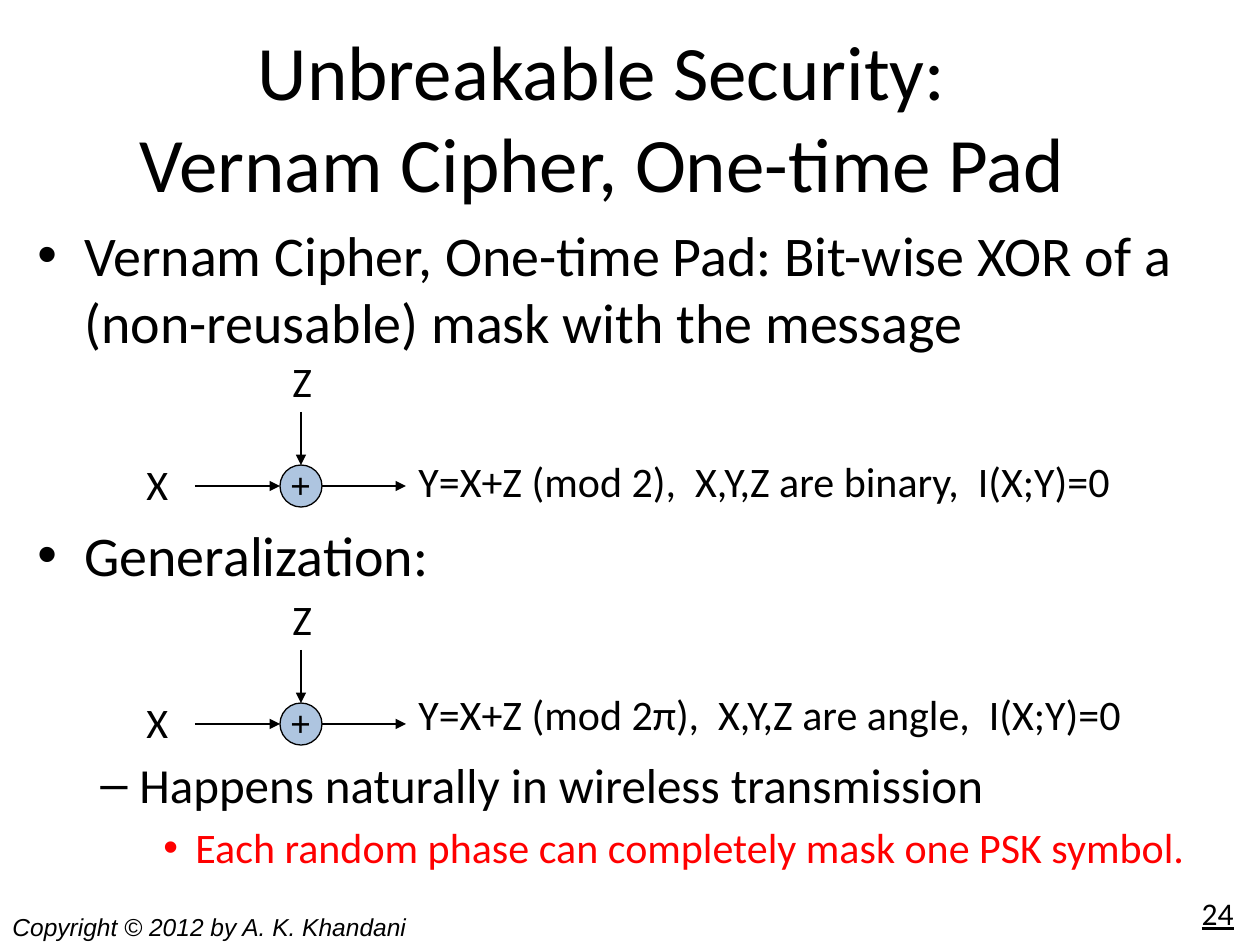
from lxml.etree import SubElement
from pptx import Presentation
from pptx.dml.color import RGBColor
from pptx.enum.shapes import MSO_CONNECTOR, MSO_SHAPE
from pptx.enum.text import MSO_ANCHOR, PP_ALIGN
from pptx.oxml.ns import qn
from pptx.util import Emu, Pt

PX = 914400 / 126
COLORS = {"text": "000000", "accent": "FF0000", "node": "4F81BD"}


def px(value):
    return Emu(round(value * PX))


def rgb(name):
    return RGBColor.from_string(COLORS[name])


def add_span(para, text, size, font="Calibri", color="text"):
    span = para.add_run()
    span.text = text
    span.font.size = Pt(size)
    span.font.name = font
    span.font.color.rgb = rgb(color)
    return span


def add_box(page, left, top, width, height, wrap=True, anchor=MSO_ANCHOR.TOP):
    frame = page.shapes.add_textbox(px(left), px(top), px(width), px(height)).text_frame
    frame.word_wrap = wrap
    frame.vertical_anchor = anchor
    return frame


def add_label(page, left, top, width, height, text, size=24, font="Calibri", wrap=False):
    frame = add_box(page, left, top, width, height, wrap)
    return add_span(frame.paragraphs[0], text, size, font)


def add_arrow(page, start_x, start_y, end_x, end_y):
    arrow = page.shapes.add_connector(
        MSO_CONNECTOR.STRAIGHT, px(start_x), px(start_y), px(end_x), px(end_y))
    arrow.line.color.rgb = rgb("text")
    arrow.line.width = Pt(0.75)
    SubElement(arrow.line._get_or_add_ln(), qn("a:tailEnd"), type="triangle")
    SubElement(arrow._element.spPr, qn("a:effectLst"))


def add_title(page, left, top, width, height):
    frame = add_box(page, left, top, width, height, anchor=MSO_ANCHOR.MIDDLE)
    para = frame.paragraphs[0]
    para.alignment = PP_ALIGN.CENTER
    add_span(para, "Unbreakable Security: ", 44)
    para.add_line_break()
    add_span(para, "Vernam Cipher, One-time Pad ", 44)


def add_body(page, left, top, width, height):
    # Text, size, colour, bullet, left margin, hanging indent, space before;
    # the large spaces leave room for the two diagrams
    items = [
        ("Vernam Cipher, One-time Pad: Bit-wise XOR of a (non-reusable) mask with the message",
         32, "text", "•", 47, 47, 0),
        ("Generalization:", 32, "text", "•", 47, 47, 95),
        ("Happens naturally in wireless transmission", 28, "text", "–", 102, 39, 95),
        ("Each random phase can completely mask one PSK symbol.",
         24, "accent", "•", 158, 32, 5),
    ]
    frame = add_box(page, left, top, width, height)
    for index, (text, size, color, bullet, margin, hanging, space) in enumerate(items):
        para = frame.add_paragraph() if index else frame.paragraphs[0]
        para.space_before = Pt(space)
        props = para._p.get_or_add_pPr()
        props.set("marL", str(px(margin)))
        props.set("indent", str(px(-hanging)))
        SubElement(props, qn("a:buFont"), typeface="Arial")
        SubElement(props, qn("a:buChar"), char=bullet)
        add_span(para, text, size, color=color)


def add_cipher(page, left, top, formula, formula_top, formula_width, wrap):
    # Adder node
    node = page.shapes.add_shape(
        MSO_SHAPE.OVAL, px(left + 146), px(top + 116), px(42), px(42))
    node.shadow.inherit = False
    node.fill.solid()
    node.fill.fore_color.rgb = rgb("node")
    fill_color = node._element.spPr.find(qn("a:solidFill"))[0]
    SubElement(fill_color, qn("a:alpha"), val="46000")
    node.line.color.rgb = rgb("text")
    node.line.width = Pt(0.75)
    add_label(page, left + 144, top + 108, 47, 55, "+", 20, "Arial")

    # Input, output and key arrows
    middle_x, middle_y = left + 167, top + 137
    add_arrow(page, left + 61, middle_y, left + 146, middle_y)
    add_arrow(page, left + 188, middle_y, left + 272, middle_y)
    add_arrow(page, middle_x, top + 63, middle_x, top + 116)

    # Signal names
    add_label(page, left + 146, top, 45, 63, "Z")
    add_label(page, left, top + 103, 48, 63, "X")
    add_label(page, left + 272, top + formula_top, formula_width, 63, formula, wrap=wrap)


def add_footer(page, left, top, width):
    # Copyright line
    add_label(page, left, top + 20, 421, 43,
              "Copyright © 2012 by A. K. Khandani", 14, "Arial").font.italic = True
    # Page number
    frame = add_box(page, left + width - 95, top, 81, 53, anchor=MSO_ANCHOR.MIDDLE)
    para = frame.paragraphs[0]
    para.alignment = PP_ALIGN.RIGHT
    add_span(para, "24", 18).font.underline = True


def main():
    deck = Presentation()
    deck.slide_width, deck.slide_height = px(1260), px(945)
    page = deck.slides.add_slide(deck.slide_layouts[6])
    add_title(page, 44, 37, 1134, 157)
    add_body(page, 25, 214, 1216, 624)
    add_cipher(page, 134, 349, "Y=X+Z (mod 2),  X,Y,Z are binary,  I(X;Y)=0", 100, 815, True)
    add_cipher(page, 134, 587, "Y=X+Z (mod 2π),  X,Y,Z are angle,  I(X;Y)=0", 95, 753, False)
    add_footer(page, 0, 886, 1260)
    deck.save("out.pptx")


if __name__ == "__main__":
    main()
